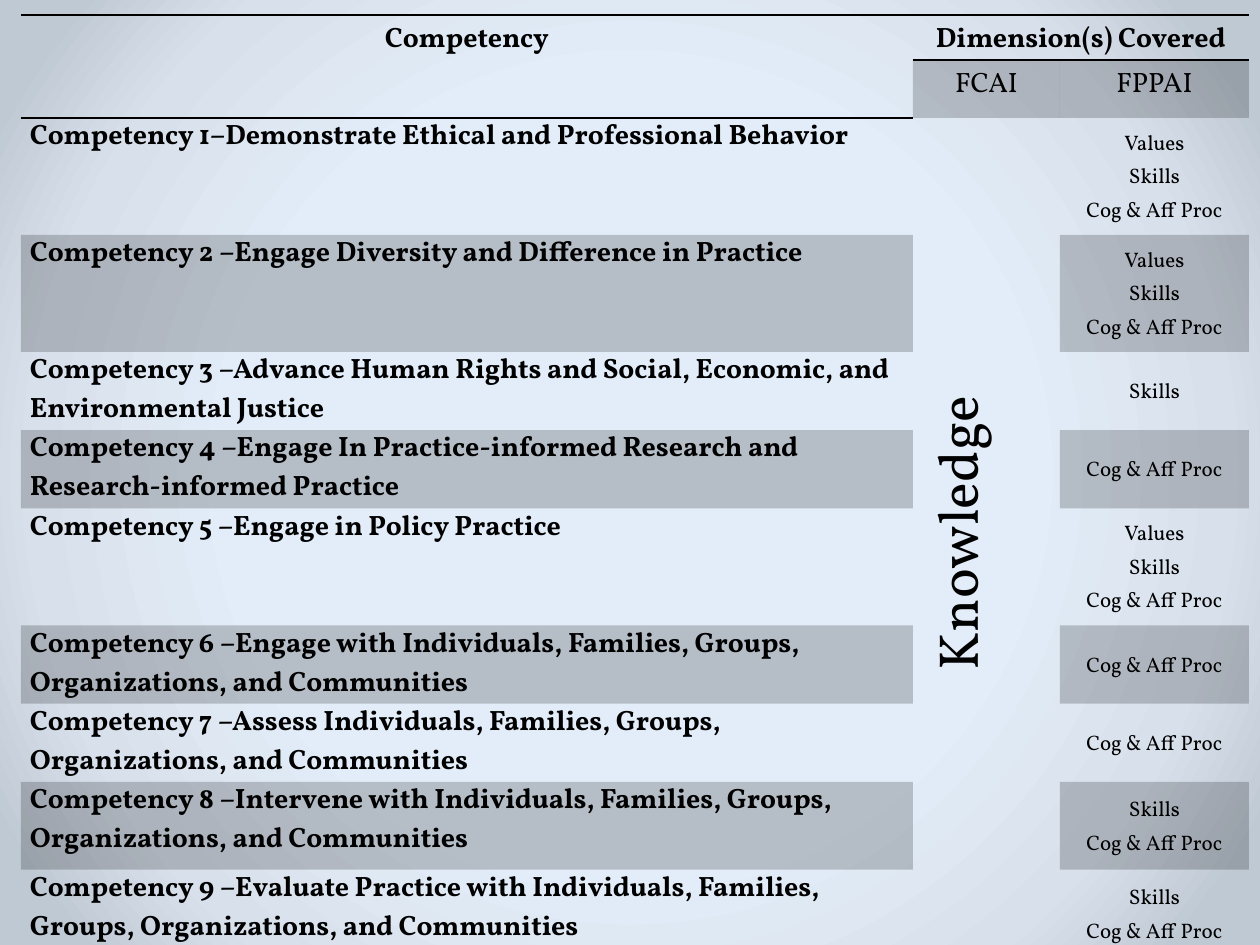
from lxml.etree import SubElement
from pptx import Presentation
from pptx.dml.color import RGBColor
from pptx.enum.text import MSO_ANCHOR, PP_ALIGN
from pptx.oxml import parse_xml
from pptx.oxml.ns import nsdecls, qn
from pptx.util import Pt

PX = 914400 // 126
INK = "000000"
PLAIN = "{2D5ABB26-0587-4C30-8999-92F81FD0307C}"
STOPS = [(50, "E3EDF9"), (76, "D8E0EB"), (92, "BFC9D4")]
COLS = [892, 147, 189]
HEAD = [28, 58]
V, S, C = "Values", "Skills", "Cog & Aff Proc"
ROWS = [
    (117, "Competency 1–Demonstrate Ethical and Professional Behavior", [V, S, C]),
    (117, "Competency 2 –Engage Diversity and Difference in Practice", [V, S, C]),
    (52, "Competency 3 –Advance Human Rights and Social, Economic, and Environmental Justice", [S]),
    (58, "Competency 4 –Engage In Practice-informed Research and Research-informed Practice", [C]),
    (117, "Competency 5 –Engage in Policy Practice", [V, S, C]),
    (58, "Competency 6 –Engage with Individuals, Families, Groups, Organizations, and Communities", [C]),
    (58, "Competency 7 –Assess Individuals, Families, Groups, Organizations, and Communities", [C]),
    (88, "Competency 8 –Intervene with Individuals, Families, Groups, Organizations, and Communities", [S, C]),
    (88, "Competency 9 –Evaluate Practice with Individuals, Families, Groups, Organizations, and Communities", [S, C]),
]


def px(n):
    return n * PX


def color(code):
    return RGBColor.from_string(code)


def write(cell, *lines, size=16, bold=False, align=PP_ALIGN.CENTER,
          lead=1.15, after=None, mid=False):
    cell.margin_left = cell.margin_right = px(9)
    cell.margin_top = cell.margin_bottom = 0
    cell.vertical_anchor = MSO_ANCHOR.MIDDLE if mid else MSO_ANCHOR.TOP
    frame = cell.text_frame
    for i, line in enumerate(lines):
        para = frame.add_paragraph() if i else frame.paragraphs[0]
        para.alignment = align
        para.line_spacing = lead
        para.space_after = after
        run = para.add_run()
        run.text = line
        font = run.font
        font.name, font.size, font.bold = "Vollkorn", Pt(size), bold
        font.color.rgb = color(INK)


def rule(cell, *sides):
    props = cell._tc.get_or_add_tcPr()
    for side in sides:
        line = SubElement(props, qn("a:ln" + side), w=str(Pt(1)))
        fill = SubElement(line, qn("a:solidFill"))
        SubElement(fill, qn("a:srgbClr"), val=INK)


def shade(cell):
    cell.fill.solid()
    cell.fill.fore_color.rgb = color(INK)
    tone = cell._tc.tcPr.find(".//" + qn("a:srgbClr"))
    SubElement(tone, qn("a:alpha"), val="20000")


def paint(slide):
    stops = "".join(
        f'<a:gs pos="{at * 1000}"><a:srgbClr val="{code}"/></a:gs>'
        for at, code in STOPS)
    fill = slide.background.fill
    fill.gradient()
    old = slide.background._cSld.find(".//" + qn("a:gradFill"))
    new = parse_xml(
        f'<a:gradFill {nsdecls("a")} rotWithShape="1"><a:gsLst>{stops}</a:gsLst>'
        '<a:path path="circle"><a:fillToRect l="50000" t="50000" r="50000" b="50000"/>'
        '</a:path></a:gradFill>')
    old.getparent().replace(old, new)


def main():
    deck = Presentation()
    deck.slide_width, deck.slide_height = px(1260), px(945)
    slide = deck.slides.add_slide(deck.slide_layouts[6])
    paint(slide)

    highs = HEAD + [row[0] for row in ROWS]
    last = len(highs) - 1
    frame = slide.shapes.add_table(len(highs), len(COLS), px(21), px(15),
                                   px(sum(COLS)), px(sum(highs)))
    grid = frame.table
    grid.first_row = grid.horz_banding = False
    grid._tbl.tblPr.find(qn("a:tableStyleId")).text = PLAIN
    for col, wide in zip(grid.columns, COLS):
        col.width = px(wide)
    for row, high in zip(grid.rows, highs):
        row.height = px(high)

    cell = grid.cell
    cell(0, 0).merge(cell(1, 0))
    cell(0, 1).merge(cell(0, 2))
    cell(2, 1).merge(cell(last, 1))

    for col, title in enumerate(["Competency", "Dimension(s) Covered"]):
        write(cell(0, col), title, bold=True)
        rule(cell(0, col), "T", "B")
    for col, title in enumerate(["FCAI", "FPPAI"], 1):
        write(cell(1, col), title)
        shade(cell(1, col))

    know = cell(2, 1)
    write(know, "Knowledge", size=32, mid=True)
    know.text_frame.paragraphs[0]._p.get_or_add_pPr().set("marL", str(px(10)))
    know._tc.tcPr.set("vert", "vert270")
    rule(know, "B")

    for i, (high, name, parts) in enumerate(ROWS):
        left, right = cell(i + 2, 0), cell(i + 2, 2)
        write(left, name, bold=True, align=PP_ALIGN.LEFT, lead=None, after=Pt(8))
        write(right, *parts, size=12, mid=True)
        for side in (left, right):
            if i + 2 == last:
                rule(side, "B")
            if i % 2:
                shade(side)

    deck.save("out.pptx")


if __name__ == "__main__":
    main()
